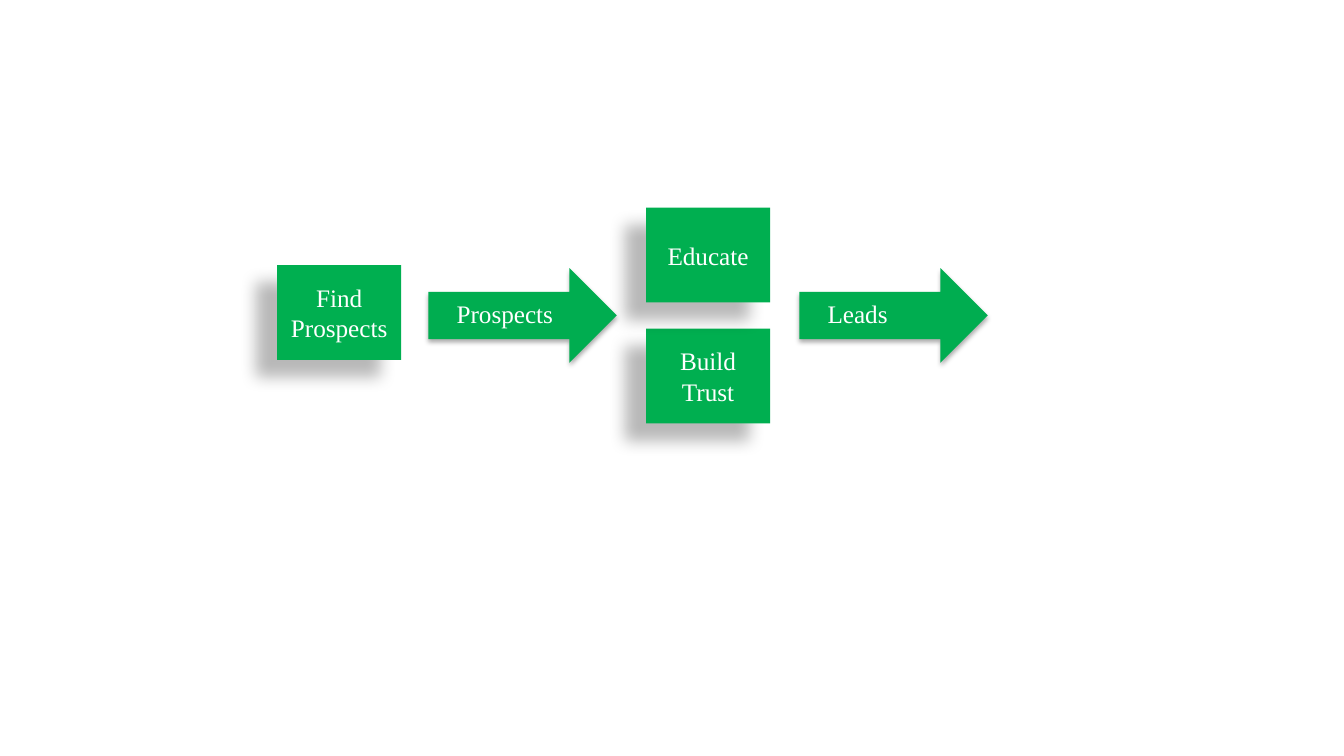
from lxml.etree import SubElement
from pptx import Presentation
from pptx.dml.color import RGBColor
from pptx.enum.shapes import MSO_SHAPE
from pptx.enum.text import MSO_ANCHOR, MSO_AUTO_SIZE, PP_ALIGN
from pptx.oxml.ns import qn
from pptx.util import Pt

# Content: text, left, top in points
STEPS = [
    ("Find Prospects", 198, 189.4),
    ("Build Trust", 461.5, 234.7),
    ("Educate", 461.5, 148.3),
]
FLOWS = [("Prospects", 306), ("Leads", 571)]

# Layout and style
SLIDE_SIZE = (960, 540)
STEP_SIZE = (88.6, 67.7)
ARROW_SIZE = (134.6, 67.7)
ARROW_TOP = 191.5
LABEL_SIZE = (97.2, 28.8)
LABEL_OFFSET = (13, 18)
COLORS = {"step": "00AF50", "arrow": "00AD50", "text": "FFFFFF", "shadow": "000000"}
FONT = {"name": "Times New Roman", "size": Pt(18)}
STEP_FRAME = {"word_wrap": True, "vertical_anchor": MSO_ANCHOR.MIDDLE}
LABEL_FRAME = {"word_wrap": True, "auto_size": MSO_AUTO_SIZE.SHAPE_TO_FIT_TEXT}
STEP_SHADOW = {"blur": 11.8, "distance": 19.7, "angle": 141, "opacity": 28}
ARROW_SHADOW = {"blur": 3.5, "distance": 2.2, "angle": 90, "opacity": 32}


def apply_format(target, values):
    for name, value in values.items():
        setattr(target, name, value)


def add_shadow(shape, shadow):
    shape.shadow.inherit = False
    effects = shape._element.spPr.find(qn("a:effectLst"))
    outer = SubElement(effects, qn("a:outerShdw"), {
        "blurRad": str(int(Pt(shadow["blur"]))),
        "dist": str(int(Pt(shadow["distance"]))),
        "dir": str(shadow["angle"] * 60000),
        "algn": "ctr",
        "rotWithShape": "0",
    })
    color = SubElement(outer, qn("a:srgbClr"), val=COLORS["shadow"])
    SubElement(color, qn("a:alpha"), val=str(shadow["opacity"] * 1000))


def add_block(slide, kind, left, top, size, color, shadow):
    shape = slide.shapes.add_shape(kind, Pt(left), Pt(top), *map(Pt, size))
    shape.fill.solid()
    shape.fill.fore_color.rgb = RGBColor.from_string(COLORS[color])
    shape.line.fill.background()
    add_shadow(shape, shadow)
    return shape


def write_text(shape, text, frame_format, alignment):
    apply_format(shape.text_frame, frame_format)
    paragraph = shape.text_frame.paragraphs[0]
    paragraph.alignment = alignment
    run = paragraph.add_run()
    run.text = text
    apply_format(run.font, FONT)
    run.font.color.rgb = RGBColor.from_string(COLORS["text"])


def main():
    presentation = Presentation()
    presentation.slide_width, presentation.slide_height = map(Pt, SLIDE_SIZE)
    slide = presentation.slides.add_slide(presentation.slide_layouts[6])

    # Step boxes
    for text, left, top in STEPS:
        step = add_block(slide, MSO_SHAPE.RECTANGLE, left, top, STEP_SIZE, "step", STEP_SHADOW)
        write_text(step, text, STEP_FRAME, PP_ALIGN.CENTER)

    # Flow arrows with their labels
    for text, left in FLOWS:
        add_block(slide, MSO_SHAPE.RIGHT_ARROW, left, ARROW_TOP, ARROW_SIZE, "arrow", ARROW_SHADOW)
        label_left, label_top = left + LABEL_OFFSET[0], ARROW_TOP + LABEL_OFFSET[1]
        label = slide.shapes.add_textbox(Pt(label_left), Pt(label_top), *map(Pt, LABEL_SIZE))
        write_text(label, text, LABEL_FRAME, PP_ALIGN.LEFT)

    presentation.save("out.pptx")


if __name__ == "__main__":
    main()
